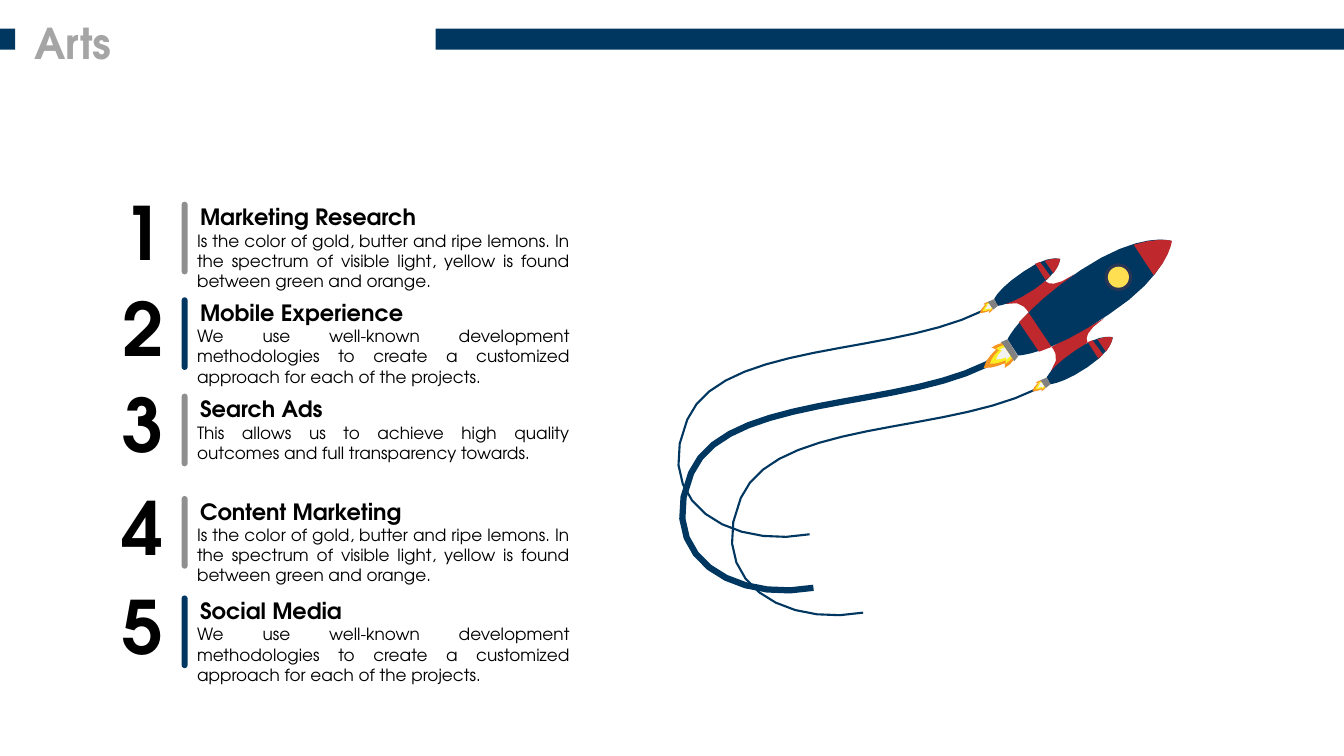
from math import ceil, dist, sqrt

from pptx import Presentation
from pptx.dml.color import RGBColor
from pptx.enum.shapes import MSO_SHAPE
from pptx.enum.text import PP_ALIGN
from pptx.util import Pt

RECT, OVAL = MSO_SHAPE.RECTANGLE, MSO_SHAPE.OVAL
BAR = MSO_SHAPE.ROUND_2_SAME_RECTANGLE
LEFT, JUSTIFY = PP_ALIGN.LEFT, PP_ALIGN.JUSTIFY

THEME = {
    "font": "TeX Gyre Adventor",
    "navy": "003760", "gray": "8F8F8F", "title": "A5A5A5", "ink": "000000",
    "red": "BF282D", "steel": "818181", "rim": "293555", "glass": "FEDF52",
    "orange": "F69321", "yellow": "FAED22", "white": "F2F2F2",
    "title_size": 32, "number_size": 55.4, "heading_size": 16.9, "body_size": 12.7,
}

COLOR_TEXT = ("Is the color of gold, butter and ripe lemons. In the spectrum of "
              "visible light, yellow is found between green and orange.")
METHOD_TEXT = ("We use well-known development methodologies to create a customized "
               "approach for each of the projects.")
QUALITY_TEXT = ("This allows us to achieve high quality outcomes and full "
                "transparency towards.")

TITLE = "Arts"
ITEMS = [
    ("Marketing Research", COLOR_TEXT, "gray", 152),
    ("Mobile Experience", METHOD_TEXT, "navy", 224),
    ("Search Ads", QUALITY_TEXT, "gray", 296.6),
    ("Content Marketing", COLOR_TEXT, "gray", 373.7),
    ("Social Media", METHOD_TEXT, "navy", 448.6),
]
STRIPES = [(328.2, 684.4), (0, 11.5)]

UNIT = 0.72
SMOOTHNESS = 0.75
TRAIL = [(1047, 314), (958, 376, 757, 351, 719, 439), (681, 527, 765, 574, 847, 559)]
TRAILS = [(0, 0, 1.59), (56, 82, 1.59), (4, 56, 4.7)]

LOWER_FIN = ("red", [(1138, 358), (1138, 358, 1130, 350, 1155, 333), (1100, 363),
                     (1100, 363, 1111, 373, 1100, 387), (1089, 401, 1138, 358, 1138, 358)])
HULL = [
    ("red", [(1094, 294), (1094, 294, 1099, 304, 1124, 287), (1076, 327),
             (1076, 327, 1070, 313, 1053, 318), (1036, 323, 1094, 294, 1094, 294)]),
    ("navy", [(1225, 252), (1225, 252, 1193, 241, 1130, 283),
              (1067, 326, 1054, 355, 1054, 355), (1065, 372),
              (1065, 372, 1097, 372, 1160, 329), (1224, 287, 1225, 252, 1225, 252)]),
    ("red", [(1087, 368), (1100, 363), (1076, 327), (1066, 337)]),
    ("red", [(1207, 288), (1225, 267, 1226, 252, 1226, 252),
             (1226, 252, 1212, 248, 1186, 256)]),
]
BOOSTER = [
    ("navy", [(1109, 271), (1109, 271, 1096, 266, 1071, 284),
              (1045, 301, 1040, 313, 1040, 313), (1044, 320),
              (1044, 320, 1058, 319, 1083, 302), (1109, 285, 1109, 271, 1109, 271)]),
    ("red", [(1088, 274), (1083, 276), (1094, 293), (1099, 289)]),
    ("red", [(1102, 286), (1109, 277, 1109, 271, 1109, 271),
             (1109, 271, 1104, 269, 1093, 273)]),
    ("steel", [(1039, 324), (1033, 316), (1040, 313), (1044, 320)]),
]
BOOSTER_SHIFT = (55, 82)
NOZZLE = ("steel", [(1061, 378), (1047, 358), (1054, 355), (1065, 373)])
WINDOW = (1170, 290)
WINDOW_RINGS = [("rim", 29), ("glass", 22)]

FLAME = [(6, 9), (-6, -9), (-6, -9, -12, -8, -17, -4), (-17, -4, -13, -4, -12, -2),
         (-12, -2, -23, 7, -25, 17), (-15, 18, -3, 12, -3, 12),
         (-2, 13, -3, 17, -3, 17), (3, 14, 6, 9, 6, 9)]
FLAME_LAYERS = [("orange", 1), ("yellow", 0.74), ("white", 0.48)]
MAIN_FLAME = (1054, 368, 1)
BOOSTER_FLAME = (1036, 320, 0.44)


def color(name):
    return RGBColor.from_string(THEME[name])


def paint(sp, fill):
    sp.shadow.inherit = False
    sp.fill.solid()
    sp.fill.fore_color.rgb = color(fill)
    sp.line.fill.background()


def add_shape(shapes, kind, box, fill):
    sp = shapes.add_shape(kind, *map(Pt, box))
    paint(sp, fill)
    return sp


def add_text(shapes, text, box, inset, style, ink="ink", bold=True, align=LEFT):
    tf = shapes.add_textbox(*map(Pt, box)).text_frame
    across, down = map(Pt, inset)
    frame = {"word_wrap": True, "margin_left": across, "margin_right": across,
             "margin_top": down, "margin_bottom": down}
    for name, value in frame.items():
        setattr(tf, name, value)
    p = tf.paragraphs[0]
    p.alignment = align
    r = p.add_run()
    r.text = text
    font = {"name": THEME["font"], "size": Pt(THEME[style]), "bold": bold}
    for name, value in font.items():
        setattr(r.font, name, value)
    r.font.color.rgb = color(ink)


def flatten(path, scale):
    points = [path[0]]
    for step in path[1:]:
        if len(step) == 2:
            points.append(step)
            continue
        knots = [points[-1], step[:2], step[2:4], step[4:]]
        count = ceil(SMOOTHNESS * sqrt(scale * dist(knots[0], knots[3])))
        for i in range(1, count + 1):
            t = i / count
            weights = ((1 - t) ** 3, 3 * t * (1 - t) ** 2, 3 * t * t * (1 - t), t ** 3)
            points.append(tuple(sum(w * k[axis] for w, k in zip(weights, knots))
                                for axis in (0, 1)))
    return points


def add_outline(shapes, path, dx=0, dy=0, scale=1, close=True):
    points = [(Pt((x * scale + dx) * UNIT), Pt((y * scale + dy) * UNIT))
              for x, y in flatten(path, scale)]
    builder = shapes.build_freeform(*points[0])
    builder.add_line_segments(points[1:], close=close)
    return builder.convert_to_shape()


def add_parts(shapes, parts, dx=0, dy=0):
    for fill, path in parts:
        paint(add_outline(shapes, path, dx, dy), fill)


def add_flame(shapes, x, y, size):
    for fill, scale in FLAME_LAYERS:
        paint(add_outline(shapes, FLAME, x, y, size * scale), fill)


def add_booster(shapes, dx=0, dy=0):
    add_parts(shapes, BOOSTER, dx, dy)
    x, y, size = BOOSTER_FLAME
    add_flame(shapes, x + dx, y + dy, size)


def add_trails(shapes):
    for dx, dy, width in TRAILS:
        sp = add_outline(shapes, TRAIL, dx, dy, close=False)
        sp.shadow.inherit = False
        sp.fill.background()
        sp.line.color.rgb = color("navy")
        sp.line.width = Pt(width)


def add_rocket(shapes):
    add_parts(shapes, [LOWER_FIN])
    add_booster(shapes, *BOOSTER_SHIFT)
    add_parts(shapes, HULL)
    add_booster(shapes)
    for fill, size in WINDOW_RINGS:
        x, y = ((c - size / 2) * UNIT for c in WINDOW)
        add_shape(shapes, OVAL, (x, y, size * UNIT, size * UNIT), fill)
    add_parts(shapes, [NOZZLE])
    add_flame(shapes, *MAIN_FLAME)


def add_item(shapes, number, heading, body, fill, top):
    add_text(shapes, body, (139, top + 17.2, 299.5, 55.4), (9.4, 4.3),
             "body_size", bold=False, align=JUSTIFY)
    bar = add_shape(shapes, BAR, (136.8, top, 4.5, 54.7), fill)
    for i in (0, 1):
        bar.adjustments[i] = 0.5
    add_text(shapes, str(number), (84, top - 14.4, 46, 75), (7.9, 3.6), "number_size")
    add_text(shapes, heading, (143.6, top - 2.2, 374.4, 27.4), (7.2, 3.6), "heading_size")


def main():
    prs = Presentation()
    prs.slide_width, prs.slide_height = Pt(1012.3), Pt(569.5)
    s = prs.slides.add_slide(prs.slide_layouts[6])
    add_trails(s.shapes.add_group_shape().shapes)
    for number, item in enumerate(ITEMS, 1):
        add_item(s.shapes, number, *item)
    add_rocket(s.shapes.add_group_shape().shapes)
    for left, width in STRIPES:
        add_shape(s.shapes, RECT, (left, 21.6, width, 15.8), "navy")
    add_text(s.shapes, TITLE, (25.9, 13, 58.3, 38.9), (0, 0), "title_size", ink="title")
    prs.save("out.pptx")


if __name__ == "__main__":
    main()
